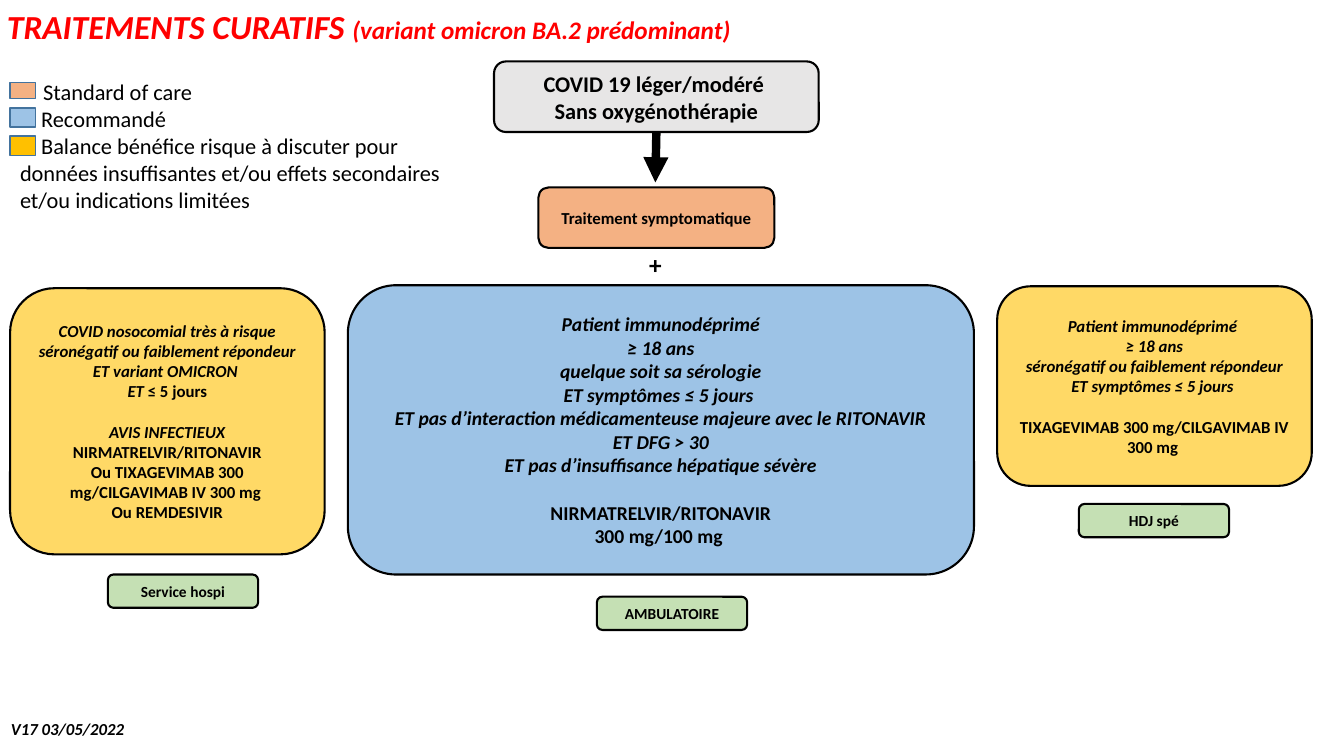
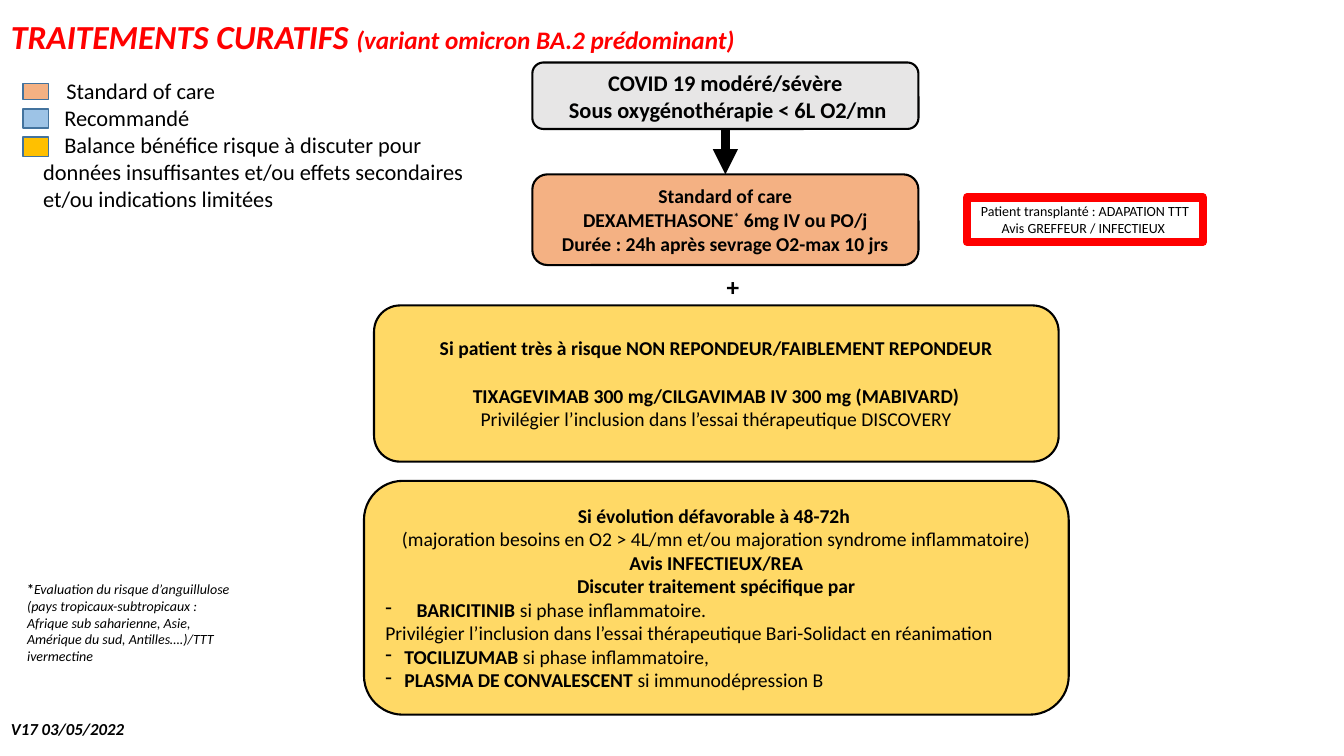
from dataclasses import dataclass

from lxml import etree
from pptx import Presentation
from pptx.dml.color import RGBColor
from pptx.enum.shapes import MSO_CONNECTOR, MSO_SHAPE
from pptx.enum.text import MSO_ANCHOR, PP_ALIGN
from pptx.oxml.ns import qn
from pptx.util import Emu, Pt

EMU_PER_PX = 9144
FONT = "Calibri"
LINE_HEIGHT = 1.22

BLACK = "000000"
RED = "FF0000"
GREY = "E7E6E6"
ORANGE = "F4B183"
BLUE = "9DC3E6"
YELLOW = "FFD966"
AMBER = "FFC000"
GREEN = "C5E0B4"
SWATCH_EDGE = "43739E"

ROUNDED = MSO_SHAPE.ROUNDED_RECTANGLE
RECTANGLE = MSO_SHAPE.RECTANGLE
STRAIGHT = MSO_CONNECTOR.STRAIGHT
TOP = MSO_ANCHOR.TOP
MIDDLE = MSO_ANCHOR.MIDDLE
LEFT = PP_ALIGN.LEFT
CENTER = PP_ALIGN.CENTER
JUSTIFY = PP_ALIGN.JUSTIFY
SIDE_TOP, SIDE_BOTTOM = 0, 2


@dataclass(frozen=True)
class Span:
    text: str
    bold: bool = True
    italic: bool = False
    size: int | None = None
    raised: bool = False


@dataclass(frozen=True)
class Line:
    spans: tuple[Span, ...]
    align: PP_ALIGN = CENTER
    gap_before: bool = False
    first_indent: int = 0
    hanging: int = 0


@dataclass(frozen=True)
class Box:
    left: int
    top: int
    width: int
    height: int


@dataclass(frozen=True)
class Card:
    box: Box
    fill: str
    size: int
    lines: tuple[Line, ...]


@dataclass(frozen=True)
class Swatch:
    drop: int
    height: int
    fill: str


SWATCHES = (Swatch(0, 16, ORANGE), Swatch(25, 19, BLUE), Swatch(53, 19, AMBER))
LEGEND = (
    (23, "Standard of care"),
    (21, "Recommandé"),
    (21, "Balance bénéfice risque à discuter pour données insuffisantes "
         "et/ou effets secondaires et/ou indications limitées"),
)


def px(value: int) -> Emu:
    return Emu(value * EMU_PER_PX)


def rgb(value: str) -> RGBColor:
    return RGBColor.from_string(value)


def line(text: str, bold: bool = True, italic: bool = False, **layout) -> Line:
    return Line((Span(text, bold, italic),), **layout)


def add_run(paragraph, text: str, *, size: int, color: str = BLACK, bold: bool = False,
            italic: bool = False, raised: bool = False) -> None:
    run = paragraph.add_run()
    run.text = text
    run.font.name = FONT
    run.font.size = Pt(size)
    run.font.bold = bold
    run.font.italic = italic
    run.font.color.rgb = rgb(color)
    if raised:
        run.font._element.set("baseline", "30000")


def write_lines(shape, lines: tuple[Line, ...], *, size: int, color: str = BLACK,
                anchor: MSO_ANCHOR = MIDDLE) -> None:
    frame = shape.text_frame
    frame.word_wrap = True
    frame.vertical_anchor = anchor
    for index, item in enumerate(lines):
        paragraph = frame.add_paragraph() if index else frame.paragraphs[0]
        paragraph.alignment = item.align
        if item.gap_before:
            paragraph.space_before = Pt(size * LINE_HEIGHT)
        properties = paragraph._p.get_or_add_pPr()
        if item.first_indent:
            properties.set("indent", str(px(item.first_indent)))
        if item.hanging:
            properties.set("marL", str(px(item.hanging)))
            properties.set("indent", str(-px(item.hanging)))
            etree.SubElement(properties, qn("a:buChar"), char="-")
        for span in item.spans:
            add_run(paragraph, span.text, size=span.size or size, color=color,
                    bold=span.bold, italic=span.italic, raised=span.raised)


def add_label(slide, box: Box, *lines: Line, size: int, color: str = BLACK) -> None:
    label = slide.shapes.add_textbox(px(box.left), px(box.top), px(box.width), px(box.height))
    write_lines(label, lines, size=size, color=color, anchor=TOP)


def add_block(slide, kind: MSO_SHAPE, box: Box, fill: str | None, edge: str, weight: float):
    shape = slide.shapes.add_shape(kind, px(box.left), px(box.top), px(box.width), px(box.height))
    shape.shadow.inherit = False
    if fill:
        shape.fill.solid()
        shape.fill.fore_color.rgb = rgb(fill)
    else:
        shape.fill.background()
    shape.line.color.rgb = rgb(edge)
    shape.line.width = Pt(weight)
    return shape


def add_card(slide, card: Card):
    shape = add_block(slide, ROUNDED, card.box, card.fill, BLACK, 1.5)
    write_lines(shape, card.lines, size=card.size)
    return shape


def add_arrow(slide, source, end: tuple[int, int], target=None) -> None:
    end_x, end_y = px(end[0]), px(end[1])
    arrow = slide.shapes.add_connector(STRAIGHT, end_x, source.top + source.height, end_x, end_y)
    arrow.begin_connect(source, SIDE_BOTTOM)
    if target is not None:
        arrow.end_connect(target, SIDE_TOP)
    arrow.line.color.rgb = rgb(BLACK)
    arrow.line.width = Pt(6)
    etree.SubElement(arrow.get_or_add_ln(), qn("a:tailEnd"), type="triangle")
    etree.SubElement(arrow._element.spPr, qn("a:effectLst"))


def add_plus(slide, left: int, top: int) -> None:
    add_label(slide, Box(left, top, 40, 40), line("+", align=LEFT), size=18)


def add_legend(slide, swatch_left: int, swatch_top: int, text_left: int, text_top: int) -> None:
    lines = (line(text, False, align=LEFT, first_indent=indent) for indent, text in LEGEND)
    add_label(slide, Box(text_left, text_top, 448, 148), *lines, size=16)
    for swatch in SWATCHES:
        box = Box(swatch_left, swatch_top + swatch.drop, 25, swatch.height)
        add_block(slide, RECTANGLE, box, swatch.fill, SWATCH_EDGE, 1)


def add_frame(presentation, title_left: int, title_top: int):
    slide = presentation.slides.add_slide(presentation.slide_layouts[6])
    title = Line((Span("TRAITEMENTS CURATIFS ", italic=True),
                  Span("(variant omicron BA.2 prédominant)", italic=True, size=18)), LEFT)
    add_label(slide, Box(title_left, title_top, 753, 91), title, size=24, color=RED)
    add_label(slide, Box(1, 708, 150, 30), line("V17 03/05/2022", italic=True, align=LEFT), size=12)
    return slide


def build_mild_slide(presentation) -> None:
    slide = add_frame(presentation, -3, 1)
    add_legend(slide, 10, 82, 10, 73)
    header = add_card(slide, Card(Box(490, 61, 322, 70), GREY, 16, (
        line("COVID 19 léger/modéré "), line("Sans oxygénothérapie"))))
    add_arrow(slide, header, (650, 181))
    add_plus(slide, 634, 242)
    cards = (
        Card(Box(534, 186, 234, 60), ORANGE, 12, (line("Traitement symptomatique"),)),
        Card(Box(10, 286, 312, 264), YELLOW, 12, (
            line("COVID nosocomial très à risque séronégatif ou faiblement répondeur", italic=True),
            line("ET variant OMICRON ", italic=True),
            Line((Span("ET ", italic=True), Span("≤ 5 jours"))),
            line("AVIS INFECTIEUX", italic=True, gap_before=True),
            line("NIRMATRELVIR/RITONAVIR"),
            line("Ou TIXAGEVIMAB 300 mg/CILGAVIMAB IV 300 mg "),
            line("Ou REMDESIVIR"))),
        Card(Box(345, 283, 621, 287), BLUE, 14, (
            line(" Patient immunodéprimé ", italic=True),
            line("≥ 18 ans", italic=True),
            line("quelque soit sa sérologie", italic=True),
            line("ET symptômes ≤ 5 jours ", italic=True),
            line("ET pas d’interaction médicamenteuse majeure avec le RITONAVIR", italic=True),
            line("ET DFG > 30", italic=True),
            line("ET pas d’insuffisance hépatique sévère", italic=True),
            line("NIRMATRELVIR/RITONAVIR", gap_before=True),
            line("300 mg/100 mg "))),
        Card(Box(989, 284, 312, 198), YELLOW, 12, (
            line("Patient immunodéprimé ", italic=True),
            line("≥ 18 ans", italic=True),
            line("séronégatif ou faiblement répondeur ET symptômes ≤ 5 jours ", italic=True),
            line("TIXAGEVIMAB 300 mg/CILGAVIMAB IV 300 mg ", gap_before=True))),
    )
    for card in cards:
        add_card(slide, card)
    for left, top, place in ((107, 570, "Service hospi"), (592, 592, "AMBULATOIRE"),
                             (1070, 500, "HDJ spé")):
        add_card(slide, Card(Box(left, top, 149, 33), GREEN, 11, (line(place),)))


def build_oxygen_slide(presentation) -> None:
    slide = add_frame(presentation, 1, 11)
    add_legend(slide, 23, 83, 33, 72)
    header = add_card(slide, Card(Box(528, 62, 383, 66), GREY, 16, (
        line("COVID 19 modéré/sévère"), line(" Sous oxygénothérapie < 6L O2/mn"))))
    care = add_card(slide, Card(Box(528, 173, 383, 90), ORANGE, 14, (
        line("Standard of care"),
        Line((Span("DEXAMETHASONE"), Span("*", raised=True), Span(" 6mg IV ou PO/j"))),
        line("Durée : 24h après sevrage O2-max 10 jrs"))))
    add_arrow(slide, header, (720, 173), care)
    add_plus(slide, 711, 264)
    add_card(slide, Card(Box(371, 303, 679, 155), YELLOW, 14, (
        line("Si patient très à risque NON REPONDEUR/FAIBLEMENT REPONDEUR"),
        line("TIXAGEVIMAB 300 mg/CILGAVIMAB IV 300 mg (MABIVARD)", gap_before=True),
        line("Privilégier l’inclusion dans l’essai thérapeutique DISCOVERY", False))))
    add_card(slide, Card(Box(361, 477, 699, 232), YELLOW, 14, (
        line("Si évolution défavorable à 48-72h "),
        line("(majoration besoins en O2 > 4L/mn et/ou majoration syndrome inflammatoire)", False),
        line("Avis INFECTIEUX/REA"),
        line("Discuter traitement spécifique par"),
        Line((Span("BARICITINIB"), Span(" si phase inflammatoire. ", False)), JUSTIFY, hanging=31),
        line("Privilégier l’inclusion dans l’essai thérapeutique Bari-Solidact en réanimation ",
             False, align=JUSTIFY),
        Line((Span("TOCILIZUMAB"), Span(" si phase inflammatoire,", False)), JUSTIFY, hanging=19),
        Line((Span("PLASMA DE CONVALESCENT "), Span("si immunodépression B", False)),
             JUSTIFY, hanging=19))))
    transplant = add_block(slide, RECTANGLE, Box(959, 196, 234, 44), None, RED, 6)
    write_lines(transplant, (line("Patient transplanté : ADAPATION TTT", False),
                             line("Avis GREFFEUR / INFECTIEUX ", False)), size=10, anchor=TOP)
    add_label(
        slide, Box(17, 571, 239, 94),
        Line((Span("*"), Span("Evaluation du risque d’anguillulose (pays tropicaux-subtropicaux :",
                              False, True)), LEFT),
        line("Afrique sub saharienne, Asie, Amérique du sud, Antilles….)/TTT ivermectine",
             False, True, align=LEFT),
        size=10)


def main() -> None:
    presentation = Presentation()
    presentation.slide_width = px(1333)
    presentation.slide_height = px(750)
    build_mild_slide(presentation)
    build_oxygen_slide(presentation)
    presentation.save("out.pptx")


if __name__ == "__main__":
    main()
